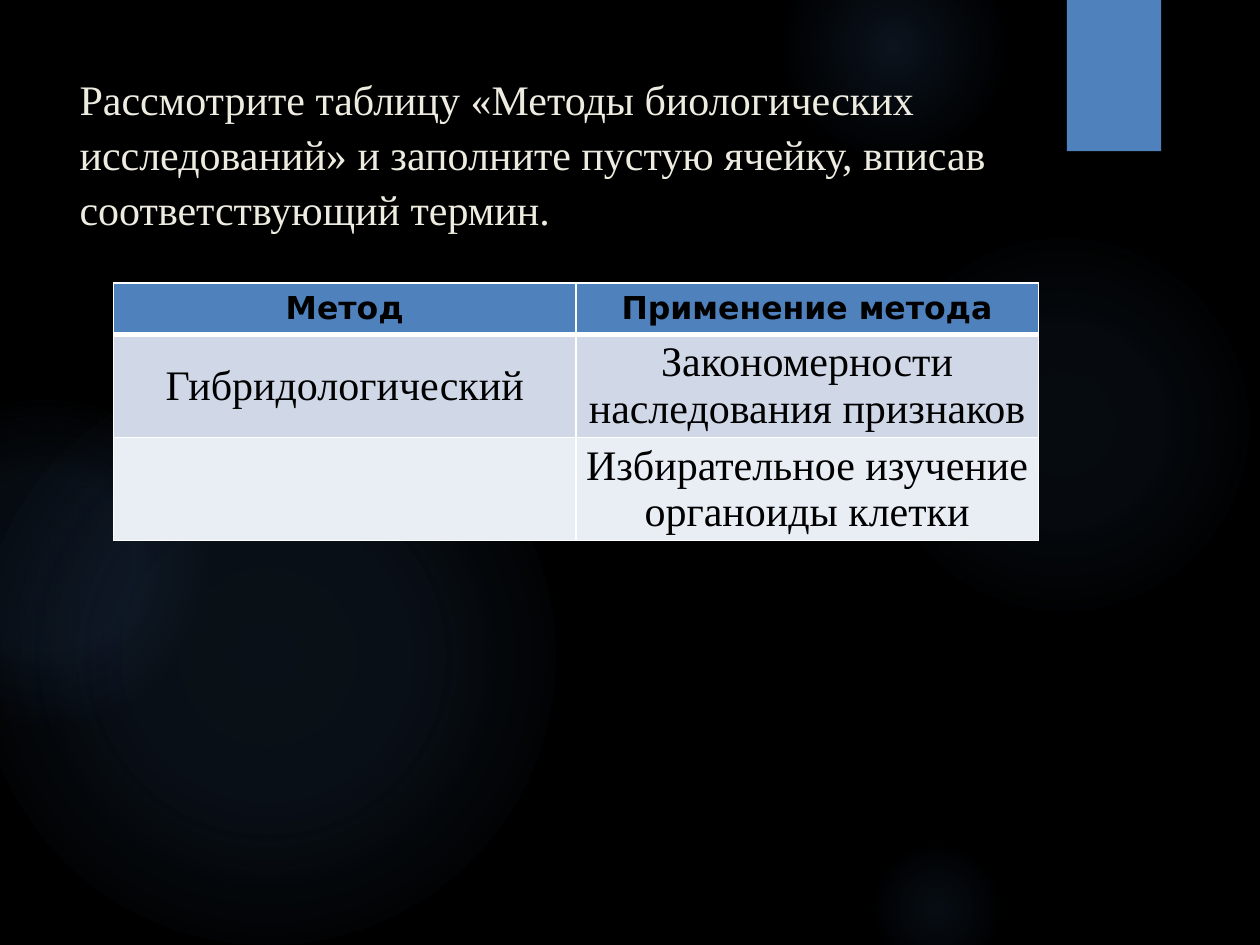
from pptx import Presentation
from pptx.dml.color import RGBColor
from pptx.enum.shapes import MSO_SHAPE as Form
from pptx.enum.text import MSO_ANCHOR as Anchor, MSO_AUTO_SIZE as Auto, PP_ALIGN as Align
from pptx.oxml import parse_xml
from pptx.oxml.ns import nsdecls
from pptx.util import Cm, Pt

BLACK = RGBColor(0x00, 0x00, 0x00)
WHITE = RGBColor(0xFF, 0xFF, 0xFF)
CREAM = RGBColor(0xEE, 0xEC, 0xE1)
BLUE = RGBColor(0x4F, 0x81, 0xBD)
GLOW = RGBColor(0x55, 0x8E, 0xD5)
DARK = RGBColor(0xD0, 0xD8, 0xE8)
PALE = RGBColor(0xE9, 0xED, 0xF4)
SERIF = "Times New Roman"
SANS = "DejaVu Sans"

TITLE = ("Рассмотрите таблицу «Методы биологических исследований» "
         "и заполните пустую ячейку, вписав соответствующий термин.")
ROWS = [
    ("Метод", "Применение метода"),
    ("Гибридологический", "Закономерности наследования признаков"),
    ("", "Избирательное изучение органоиды клетки"),
]
ORBS = [
    (17.5, 4.65, 7.82, (7, 6), 69),
    (15.8, -1.27, 4.45, (14, 7), 73),
    (17.5, 16.94, 2.74, (9, 5), 66),
    (-0.43, 7.42, 11.63, (11, 10), 75),
    (-2.34, 8.05, 6.55, (8, 8), 72),
]


def add_plain(slide, form, box):
    """Add a shape without outline or shadow."""
    shape = slide.shapes.add_shape(form, *map(Cm, box))
    shape.shadow.inherit = False
    shape.line.fill.background()
    return shape


def add_orb(slide, box, alphas, edge):
    """Add a round glow that fades out at the edge percentage."""
    shape = add_plain(slide, Form.OVAL, box)
    stops = "".join(
        f'<a:gs pos="{pos * 1000}"><a:srgbClr val="{GLOW}">'
        f'<a:alpha val="{alpha * 1000}"/></a:srgbClr></a:gs>'
        for pos, alpha in zip((0, 36, edge), (*alphas, 0)))
    shape._element.spPr.insert(2, parse_xml(
        f'<a:gradFill {nsdecls("a")} rotWithShape="1"><a:gsLst>{stops}</a:gsLst>'
        '<a:path path="circle"><a:fillToRect l="50000" t="50000" r="50000" b="50000"/>'
        '</a:path></a:gradFill>'))


def add_scene(slide):
    """Paint the dark ground, the glows and the blue tab."""
    ground = slide.background.fill
    ground.solid()
    ground.fore_color.rgb = BLACK
    for left, top, size, alphas, edge in ORBS:
        add_orb(slide, (left, top, size, size), alphas, edge)
    tab = add_plain(slide, Form.RECTANGLE, (21.51, 0, 1.9, 3.05))
    tab.fill.solid()
    tab.fill.fore_color.rgb = BLUE


def set_font(para, name, size, color, bold=False):
    """Format all the text of a paragraph."""
    font = para.font
    font.name, font.size, font.bold = name, Pt(size), bold
    font.color.rgb = color


def add_title(slide, box):
    """Fill the title placeholder and lift it above the scene."""
    title = slide.shapes.title
    slide.shapes._spTree.append(title._element)
    title.left, title.top, title.width, title.height = map(Cm, box)
    frame = title.text_frame
    frame.text = TITLE
    frame.word_wrap = True
    frame.auto_size = Auto.NONE
    frame.vertical_anchor = Anchor.TOP
    para = frame.paragraphs[0]
    para.alignment = Align.LEFT
    para.line_spacing = 1.09
    set_font(para, SERIF, 24, CREAM)


def set_lines(cell, top, base):
    """Draw white cell borders with the given top and base widths."""
    sides = zip("LRTB", (1, 1, top, base))
    for spot, (side, width) in enumerate(sides):
        cell._tc.get_or_add_tcPr().insert(spot, parse_xml(
            f'<a:ln{side} {nsdecls("a")} w="{Pt(width)}"><a:solidFill>'
            f'<a:srgbClr val="{WHITE}"/></a:solidFill></a:ln{side}>'))


def add_grid(slide, box):
    """Add the table of methods, with a head half as tall as a row."""
    left, top, width, height = box
    grid = slide.shapes.add_table(len(ROWS), 2, *map(Cm, box)).table
    grid.first_row = grid.horz_banding = False
    for col in grid.columns:
        col.width = Cm(width / 2)
    unit = height / (2 * len(ROWS) - 1)
    for row, texts in enumerate(ROWS):
        head = row == 0
        grid.rows[row].height = Cm(unit if head else 2 * unit)
        for col, text in enumerate(texts):
            cell = grid.cell(row, col)
            cell.text = text
            cell.vertical_anchor = Anchor.MIDDLE
            cell.margin_left = cell.margin_right = Cm(0.08)
            cell.margin_top = cell.margin_bottom = Cm(0.1)
            cell.fill.solid()
            cell.fill.fore_color.rgb = (BLUE, DARK, PALE)[row]
            set_lines(cell, 3 if row == 1 else 1, 3 if head else 1)
            para = cell.text_frame.paragraphs[0]
            para.alignment = Align.CENTER
            set_font(para, SANS if head else SERIF, 18 if head else 24, BLACK, head)


def main():
    """Build and save the slide."""
    deck = Presentation()
    deck.slide_width, deck.slide_height = Cm(25.4), Cm(19.05)
    slide = deck.slides.add_slide(deck.slide_layouts[5])
    add_scene(slide)
    add_title(slide, (1.35, 1.27, 19.6, 3.89))
    add_grid(slide, (2.29, 5.7, 18.64, 5.2))
    deck.save("out.pptx")


if __name__ == "__main__":
    main()
